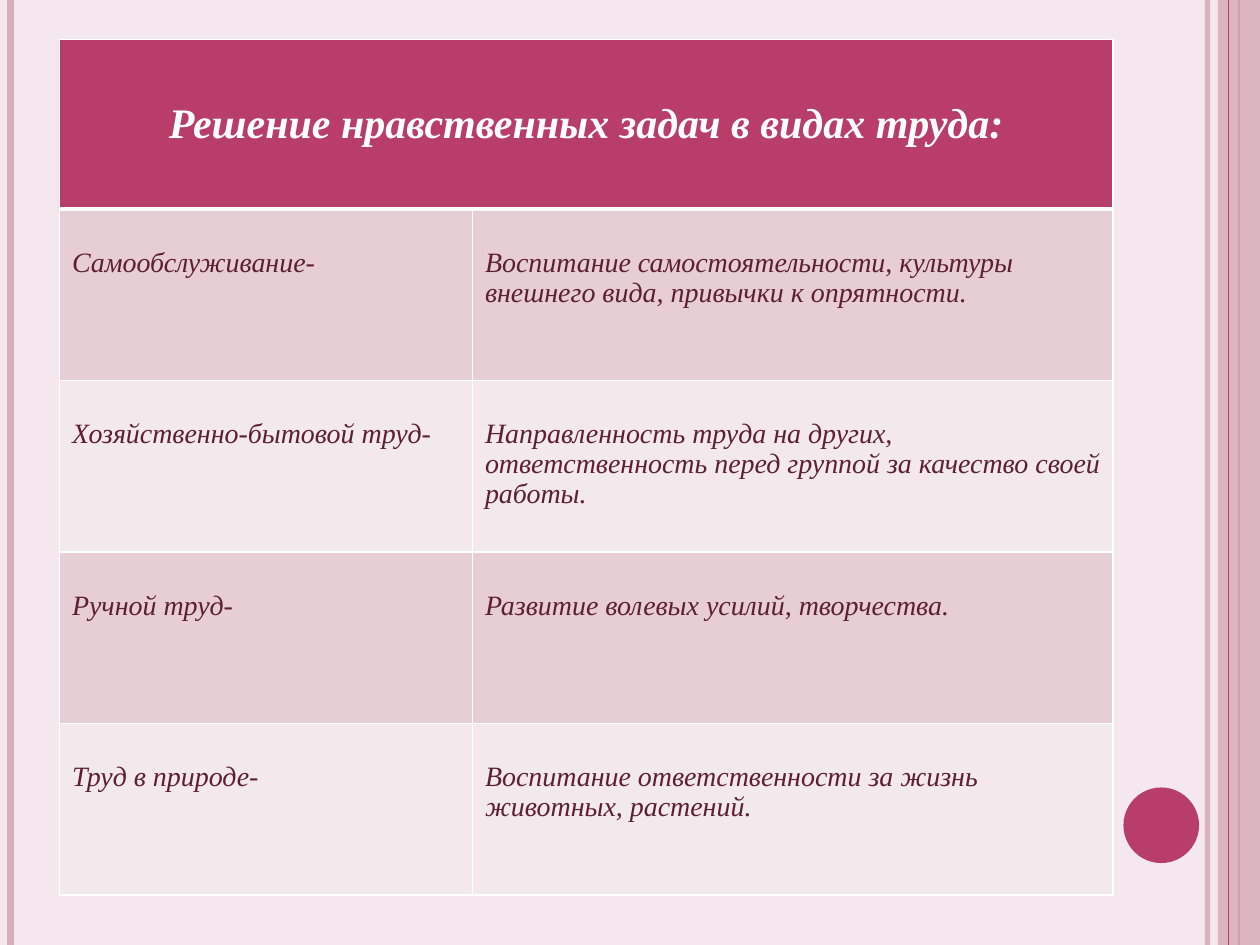
from lxml.etree import SubElement as Sub
from pptx import Presentation as Deck
from pptx.dml.color import RGBColor as Color
from pptx.enum.shapes import MSO_CONNECTOR as Link, MSO_SHAPE as Form
from pptx.enum.text import MSO_ANCHOR as Anchor, PP_ALIGN as Align
from pptx.oxml.ns import qn
from pptx.util import Pt

PAPER = Color(0xF4, 0xE7, 0xED)
ROSE = Color(0xD8, 0xAF, 0xB9)
BERRY = Color(0xB8, 0x3D, 0x68)
PLUM = Color(0x5C, 0x1F, 0x34)
WHITE = Color(0xFF, 0xFF, 0xFF)
BANDS = Color(0xE6, 0xCE, 0xD4), Color(0xF3, 0xE8, 0xEB)
WIDE, HIGH = 720, 540
FONT = "Times New Roman"
TITLE = "Решение нравственных задач в видах труда:"
TASKS = [
    ("Самообслуживание-",
     "Воспитание самостоятельности, культуры внешнего вида, привычки к опрятности."),
    ("Хозяйственно-бытовой труд-",
     "Направленность труда на других, ответственность перед группой за качество своей работы."),
    ("Ручной труд-", "Развитие волевых усилий, творчества."),
    ("Труд в природе-", "Воспитание ответственности за жизнь животных, растений."),
]


def fade(item, part):
    for tint in item._element.spPr.iter(qn("a:srgbClr")):
        Sub(tint, qn("a:alpha"), val=str(part * 1000))


def add_line(slide, left, color, width):
    line = slide.shapes.add_connector(Link.STRAIGHT, Pt(left), 0, Pt(left), Pt(HIGH))
    line.line.color.rgb = color
    line.line.width = Pt(width)
    Sub(line._element.spPr, qn("a:effectLst"))
    return line


def add_form(slide, form, box, color):
    shape = slide.shapes.add_shape(form, *map(Pt, box))
    shape.shadow.inherit = False
    shape.fill.solid()
    shape.fill.fore_color.rgb = color
    shape.line.fill.background()
    return shape


def set_edges(cell, **widths):
    props = cell._tc.get_or_add_tcPr()
    for spot, side in enumerate("LRTB"):
        width = widths.get(side, 1)
        edge = props.makeelement(qn(f"a:ln{side}"), {"w": str(Pt(width))})
        fill = Sub(edge, qn("a:solidFill"))
        Sub(fill, qn("a:srgbClr"), val=str(WHITE))
        props.insert(spot, edge)


def fill_cell(cell, text, back, color, size, bold=False):
    cell.fill.solid()
    cell.fill.fore_color.rgb = back
    para = cell.text_frame.paragraphs[0]
    run = para.add_run()
    run.text = text
    font = run.font
    font.name, font.size = FONT, Pt(size)
    font.bold, font.italic = bold, True
    font.color.rgb = color
    return para


def add_table(slide):
    wides = 236, 366
    highs = [97] + [98] * len(TASKS)
    frame = slide.shapes.add_table(len(highs), len(wides), Pt(34), Pt(22.5),
                                   Pt(sum(wides)), Pt(sum(highs)))
    table = frame.table
    for col, wide in zip(table.columns, wides):
        col.width = Pt(wide)
    for row, high in zip(table.rows, highs):
        row.height = Pt(high)

    head = table.cell(0, 0)
    head.merge(table.cell(0, 1))
    head.vertical_anchor = Anchor.MIDDLE
    fill_cell(head, TITLE, BERRY, WHITE, 24, True).alignment = Align.CENTER
    for cell in table.rows[0].cells:
        set_edges(cell, B=3)

    for num, texts in enumerate(TASKS, 1):
        for cell, text in zip(table.rows[num].cells, texts):
            cell.margin_top = Pt(22.5)
            para = fill_cell(cell, text, BANDS[(num - 1) % 2], PLUM, 16)
            para.line_spacing = 0.96
            set_edges(cell, T=3 if num == 1 else 1)


def main():
    deck = Deck()
    deck.slide_width, deck.slide_height = Pt(WIDE), Pt(HIGH)
    slide = deck.slides.add_slide(deck.slide_layouts[6])
    slide.background.fill.solid()
    slide.background.fill.fore_color.rgb = PAPER

    fade(add_line(slide, 690, ROSE, 3), 93)
    add_line(slide, 6, ROSE, 4.5)
    add_line(slide, 708, BERRY, 1.5)
    fade(add_form(slide, Form.RECTANGLE, (696, 0, 24, HIGH), ROSE), 87)
    add_line(slide, 702, BERRY, 0.75)
    add_form(slide, Form.OVAL, (642, 450, 43.2, 43.2), BERRY)
    add_table(slide)
    deck.save("out.pptx")


if __name__ == "__main__":
    main()
